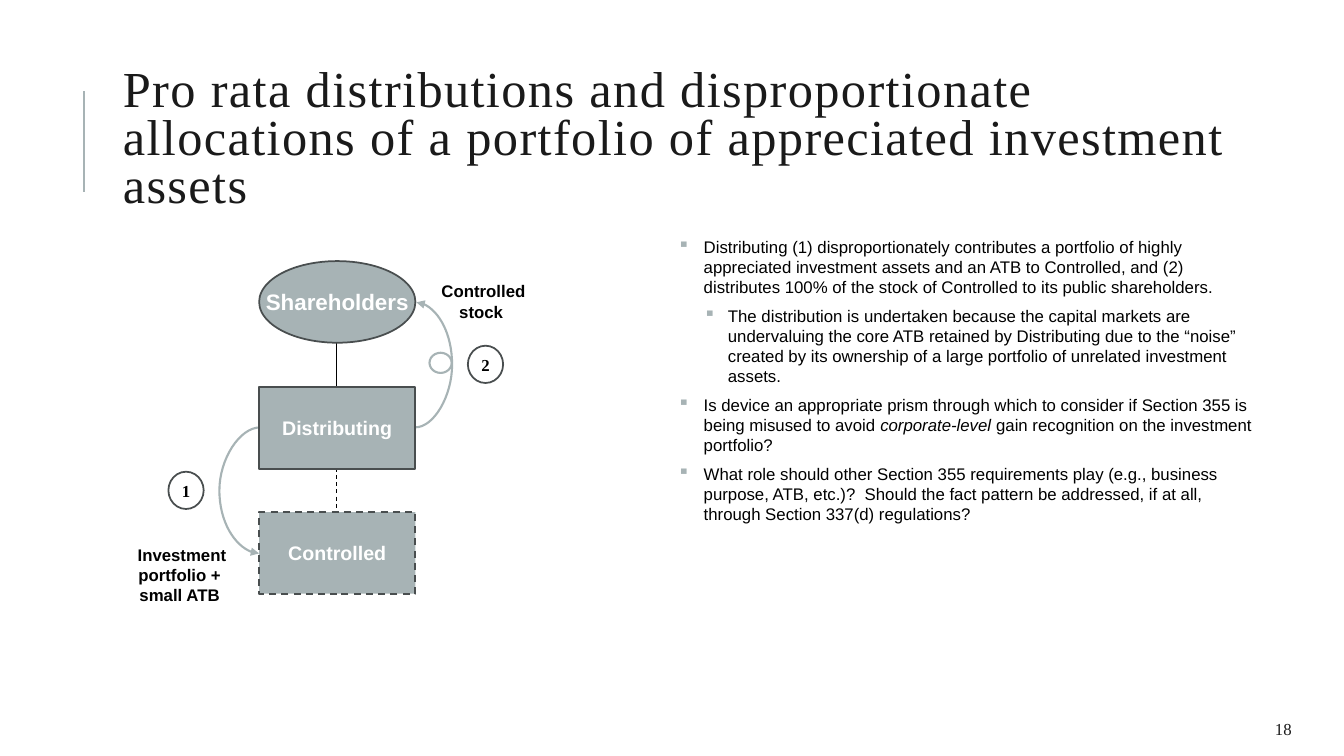
"""Build the slide on pro rata distributions with its ownership diagram."""
import pptx
import pptx.util
import pptx.dml.color
import pptx.enum.dml
import pptx.enum.shapes
import pptx.enum.text
import pptx.oxml.ns
import lxml.etree

PX = 9144
GREY, DARK, INK, BLACK, WHITE = "A7B3B5", "494E4F", "1A1A1A", "000000", "FFFFFF"
SANS, SERIF = "Arial", "Times New Roman"
SHAPE = pptx.enum.shapes.MSO_SHAPE
CONNECTOR = pptx.enum.shapes.MSO_CONNECTOR
ALIGN = pptx.enum.text.PP_ALIGN
ANCHOR = pptx.enum.text.MSO_ANCHOR
DASH = pptx.enum.dml.MSO_LINE.DASH
qn = pptx.oxml.ns.qn


def colour(hex_value):
    return pptx.dml.color.RGBColor.from_string(hex_value)


def write(box, paragraphs, font, ink, align=ALIGN.CENTER, anchor=ANCHOR.MIDDLE, wrap=True):
    frame = box.text_frame
    for name, value in {"word_wrap": wrap, "vertical_anchor": anchor}.items():
        setattr(frame, name, value)
    for index, runs in enumerate(paragraphs):
        para = frame.paragraphs[0] if index == 0 else frame.add_paragraph()
        para.alignment = align
        for text, extra in runs:
            span = para.add_run()
            span.text = text
            span.font.color.rgb = colour(ink)
            for name, value in {**font, **extra}.items():
                setattr(span.font, name, value)
    return frame


deck = pptx.Presentation()
deck.slide_width, deck.slide_height = 1333 * PX, 750 * PX
page = deck.slides.add_slide(deck.slide_layouts[6])

label_font = {"name": SANS, "size": pptx.util.Pt(12), "bold": True}
entity_font = {**label_font, "size": pptx.util.Pt(14)}
holder_font = {**label_font, "size": pptx.util.Pt(16)}
step_font = {**label_font, "name": SERIF}
title_font = {"name": SERIF, "size": pptx.util.Pt(36)}
number_font = {"name": SERIF, "size": pptx.util.Pt(12)}
body_font = {"name": SANS, "size": pptx.util.Pt(12)}

lines = [
    (CONNECTOR.STRAIGHT, (83, 190, 83, 90), GREY, 1.5, None, None),
    (CONNECTOR.STRAIGHT, (334, 340, 334, 384), BLACK, 0.75, None, None),
    (CONNECTOR.STRAIGHT, (334, 464, 334, 508), BLACK, 0.75, DASH, None),
    (CONNECTOR.CURVE, (412, 424, 413, 300), GREY, 1.5, None, 37),
    (CONNECTOR.CURVE, (258, 424, 257, 549), GREY, 1.5, None, 41),
]
for kind, ends, ink, width, dash, bulge in lines:
    link = page.shapes.add_connector(kind, *[value * PX for value in ends])
    link.line.color.rgb = colour(ink)
    link.line.width = pptx.util.Pt(width)
    if dash:
        link.line.dash_style = dash
    properties = link.line._get_or_add_ln().getparent()
    lxml.etree.SubElement(properties, qn("a:effectLst"))
    if bulge:
        guides = properties.find(qn("a:prstGeom")).get_or_add_avLst()
        lxml.etree.SubElement(guides, qn("a:gd"), name="adj1", fmla=f"val {bulge * 100000}")
        lxml.etree.SubElement(link.line._get_or_add_ln(), qn("a:tailEnd"), type="triangle")

shapes = [
    (SHAPE.OVAL, (257, 259, 155, 81), GREY, DARK, 1.25, None, "Shareholders", holder_font, WHITE),
    (SHAPE.RECTANGLE, (257, 384, 155, 81), GREY, DARK, 1.25, None, "Distributing", entity_font, WHITE),
    (SHAPE.RECTANGLE, (257, 508, 155, 81), GREY, DARK, 1.25, DASH, "Controlled", entity_font, WHITE),
    (SHAPE.OVAL, (167, 468, 35, 37), WHITE, DARK, 1.25, None, "1", step_font, BLACK),
    (SHAPE.OVAL, (464, 343, 35, 37), WHITE, DARK, 1.25, None, "2", step_font, BLACK),
    (SHAPE.OVAL, (426, 350, 22, 20), None, GREY, 1.5, None, "", label_font, BLACK),
]
for kind, place, fill, edge, width, dash, text, font, ink in shapes:
    shape = page.shapes.add_shape(kind, *[value * PX for value in place])
    shape.shadow.inherit = False
    if fill:
        shape.fill.solid()
        shape.fill.fore_color.rgb = colour(fill)
    else:
        shape.fill.background()
    shape.line.color.rgb = colour(edge)
    shape.line.width = pptx.util.Pt(width)
    if dash:
        shape.line.dash_style = dash
    if text:
        write(shape, [[(text, {})]], font, ink, wrap=False)

labels = [
    ((427, 274, 105, 50), ["Controlled stock "]),
    ((112, 535, 137, 71), ["Investment portfolio + ", "small ATB "]),
]
for place, texts in labels:
    box = page.shapes.add_textbox(*[value * PX for value in place])
    write(box, [[(text, {})] for text in texts], label_font, BLACK, anchor=ANCHOR.TOP)

title = page.shapes.add_textbox(*[value * PX for value in (112, 90, 1153, 100)])
heading = "Pro rata distributions and disproportionate allocations of a portfolio of appreciated investment assets"
frame = write(title, [[(heading, {})]], title_font, INK, ALIGN.LEFT)
frame.paragraphs[0].line_spacing = 0.8
frame.paragraphs[0].runs[0].font._element.set("spc", "100")

number = page.shapes.add_textbox(*[value * PX for value in (1185, 708, 106, 30)])
write(number, [[("18", {})]], number_font, INK, ALIGN.RIGHT)

points = [
    (0, [("Distributing (1) disproportionately contributes a portfolio of highly appreciated investment "
          "assets and an ATB to Controlled, and (2) distributes 100% of the stock of Controlled to its "
          "public shareholders.", {})]),
    (1, [("The distribution is undertaken because the capital markets are undervaluing the core ATB "
          "retained by Distributing due to the “noise” created by its ownership of a large portfolio "
          "of unrelated investment assets.", {})]),
    (0, [("Is device an appropriate prism through which to consider if Section 355 is being misused "
          "to avoid ", {}),
         ("corporate-level ", {"italic": True}),
         ("gain recognition on the investment portfolio?", {})]),
    (0, [("What role should other Section 355 requirements play (e.g., business purpose, ATB, etc.)?  "
          "Should the fact pattern be addressed, if at all, through Section 337(d) regulations?", {})]),
]
indents = [(26, -26), (50, -24)]
body = page.shapes.add_textbox(*[value * PX for value in (667, 230, 583, 481)])
frame = write(body, [runs for level, runs in points], body_font, BLACK, ALIGN.LEFT, ANCHOR.TOP)
for side in ("left", "right", "top", "bottom"):
    setattr(frame, f"margin_{side}", 5 * PX)
for para, (level, runs) in zip(frame.paragraphs, points):
    para.level = level
    para.space_after = pptx.util.Pt(6)
    properties = para._p.get_or_add_pPr()
    for name, value in zip(("marL", "indent"), indents[level]):
        properties.set(name, str(value * PX))
    bullet_colour = lxml.etree.SubElement(properties, qn("a:buClr"))
    lxml.etree.SubElement(bullet_colour, qn("a:srgbClr"), val=GREY)
    lxml.etree.SubElement(properties, qn("a:buChar"), char="▪")

deck.save("out.pptx")
